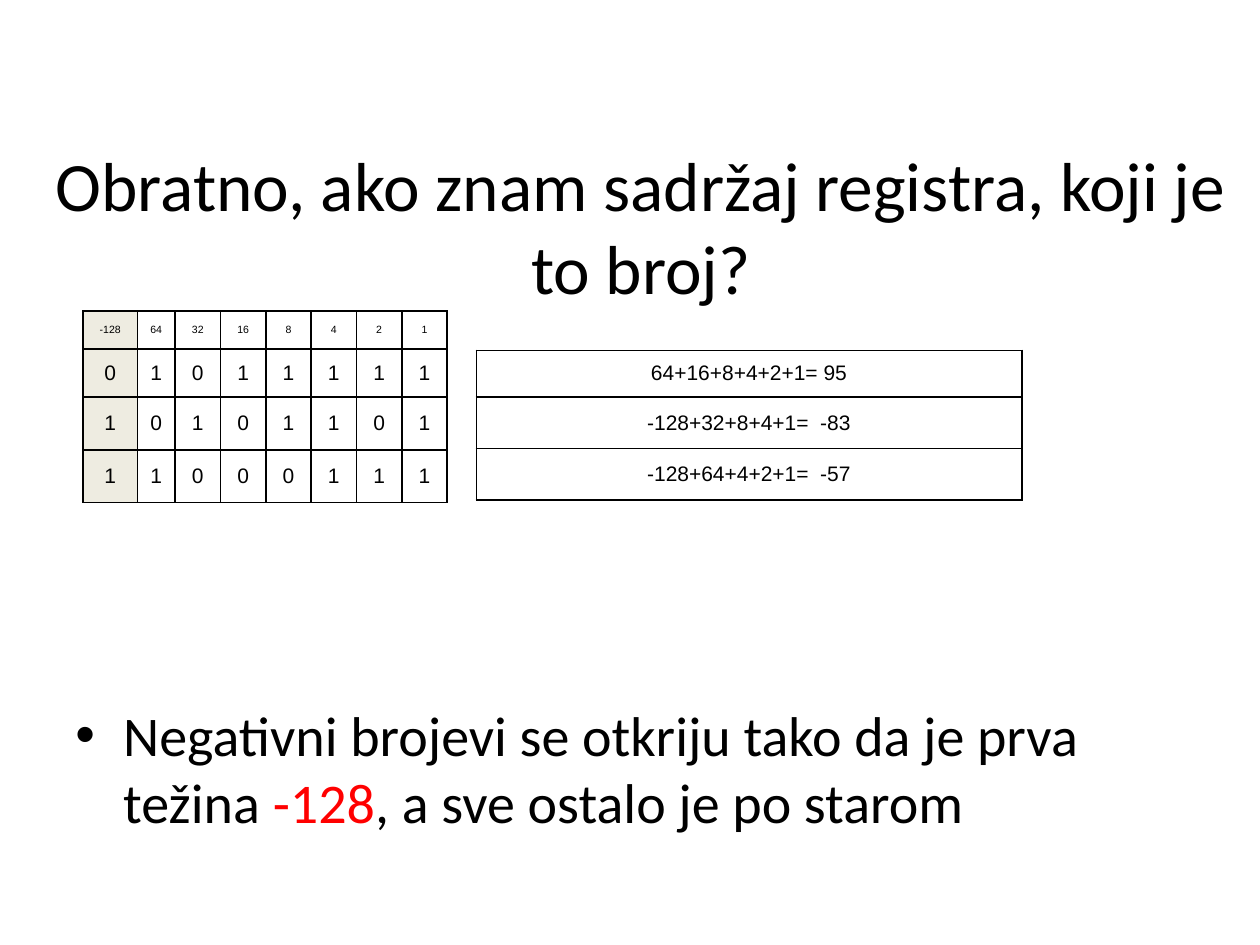
"""Build a slide that reads signed numbers back from eight-bit registers."""
from dataclasses import dataclass

from lxml.etree import SubElement
from pptx import Presentation
from pptx.dml.color import RGBColor
from pptx.enum.text import MSO_ANCHOR as Anchor, PP_ALIGN as Align
from pptx.oxml.ns import qn
from pptx.util import Inches, Pt

BLACK, WHITE, RED, SAND = "000000", "FFFFFF", "FF0000", "EEECE1"


@dataclass
class Span:
    text: str
    color: str = BLACK


@dataclass
class Grid:
    left: float
    top: float
    columns: list[float]
    rows: list[float]
    values: list[list[str]]
    sizes: list[float]
    first_fill: str


def rgb(color: str) -> RGBColor:
    return RGBColor.from_string(color)


def style(font, name: str, size: float, color: str) -> None:
    font.name, font.size = name, Pt(size)
    font.color.rgb = rgb(color)


def add_text(page, area: tuple, spans: list[Span], size: float, anchor, align):
    box = page.shapes.add_textbox(*map(Inches, area))
    frame = box.text_frame
    frame.word_wrap, frame.vertical_anchor = True, anchor
    para = frame.paragraphs[0]
    para.alignment = align
    for span in spans:
        run = para.add_run()
        run.text = span.text
        style(run.font, "Calibri", size, span.color)
    return para


def add_bullet(para, indent: float) -> None:
    properties = para._p.get_or_add_pPr()
    properties.set("marL", str(Inches(indent)))
    properties.set("indent", str(-Inches(indent)))
    SubElement(properties, qn("a:buFont"), typeface="Arial")
    SubElement(properties, qn("a:buChar"), char="•")


def add_borders(cell) -> None:
    properties = cell._tc.get_or_add_tcPr()
    for index, side in enumerate(("lnL", "lnR", "lnT", "lnB")):
        line = properties.makeelement(qn(f"a:{side}"), {"w": str(Pt(1))})
        fill = SubElement(line, qn("a:solidFill"))
        SubElement(fill, qn("a:srgbClr"), val=BLACK)
        properties.insert(index, line)


def fill_cell(cell, text: str, size: float, fill: str) -> None:
    cell.text_frame.text = text
    cell.vertical_anchor = Anchor.MIDDLE
    cell.margin_left = cell.margin_right = Inches(0.07)
    cell.margin_top = cell.margin_bottom = Inches(0.04)
    para = cell.text_frame.paragraphs[0]
    para.alignment = Align.CENTER
    style(para.runs[0].font, "Arial", size, BLACK)
    cell.fill.solid()
    cell.fill.fore_color.rgb = rgb(fill)
    add_borders(cell)


def add_grid(page, grid: Grid) -> None:
    area = (grid.left, grid.top, sum(grid.columns), sum(grid.rows))
    table = page.shapes.add_table(
        len(grid.rows), len(grid.columns), *map(Inches, area)
    ).table
    table.first_row = table.horz_banding = False
    for column, width in zip(table.columns, grid.columns):
        column.width = Inches(width)
    for row, height, values, size in zip(table.rows, grid.rows, grid.values, grid.sizes):
        row.height = Inches(height)
        for index, (cell, text) in enumerate(zip(row.cells, values)):
            fill_cell(cell, text, size, WHITE if index else grid.first_fill)


def main() -> None:
    deck = Presentation()
    deck.slide_width, deck.slide_height = Inches(10), Inches(7.5)
    page = deck.slides.add_slide(deck.slide_layouts[6])

    title = [Span("Obratno, ako znam sadržaj registra, koji je to broj?")]
    add_text(page, (0.34, 1.24, 9.49, 1.09), title, 39.6, Anchor.MIDDLE, Align.CENTER)

    note = [
        Span("Negativni brojevi se otkriju tako da je prva težina "),
        Span("-128", RED),
        Span(", a sve ostalo je po starom"),
    ]
    add_bullet(add_text(page, (0.5, 5.51, 9, 1.19), note, 32, Anchor.TOP, Align.LEFT), 0.38)

    weights = ["-128", "64", "32", "16", "8", "4", "2", "1"]
    registers = [list(bits) for bits in ("01011111", "10101101", "11000111")]
    sums = [["64+16+8+4+2+1= 95"], ["-128+32+8+4+1=  -83"], ["-128+64+4+2+1=  -57"]]
    add_grid(page, Grid(0.66, 2.47, [0.43, 0.3] + [0.36] * 6, [0.3, 0.38, 0.42, 0.42],
                        [weights] + registers, [6, 12, 12, 12], SAND))
    add_grid(page, Grid(3.78, 2.78, [4.33], [0.37, 0.41, 0.41], sums, [12] * 3, WHITE))

    deck.save("out.pptx")


if __name__ == "__main__":
    main()
